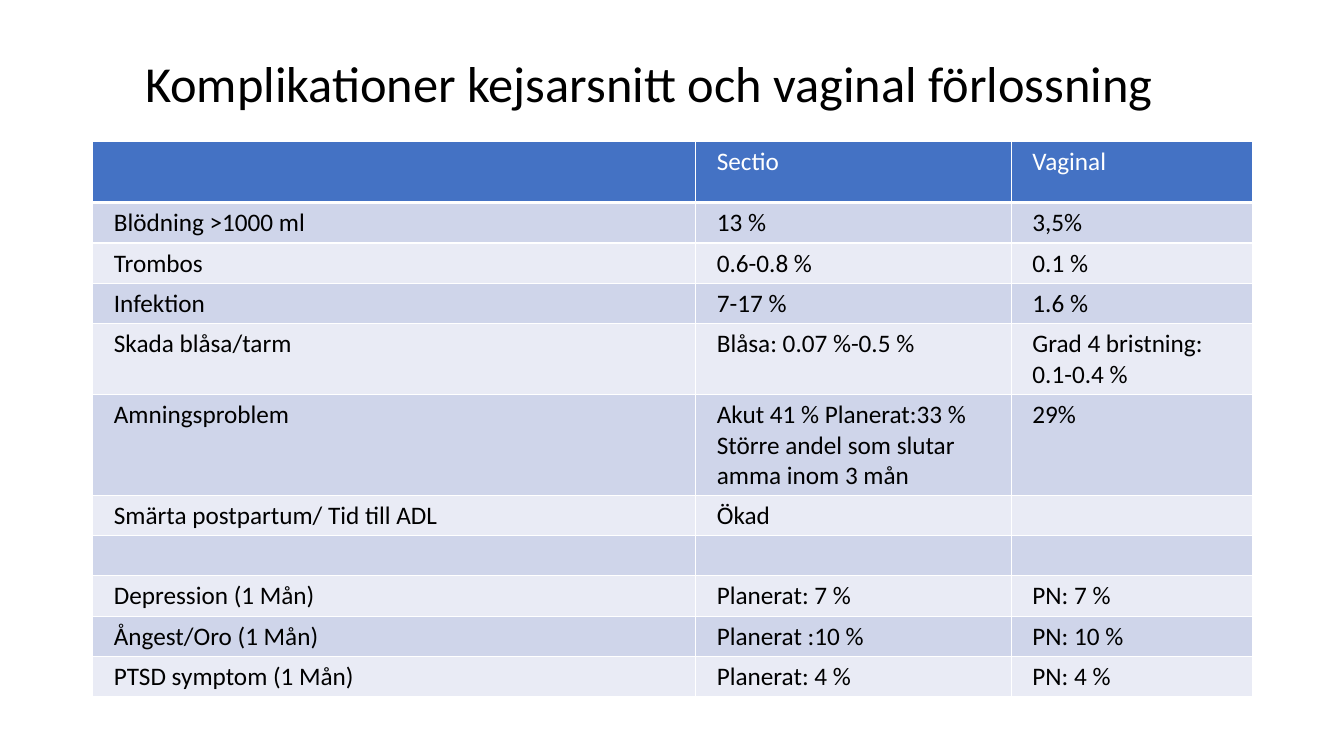
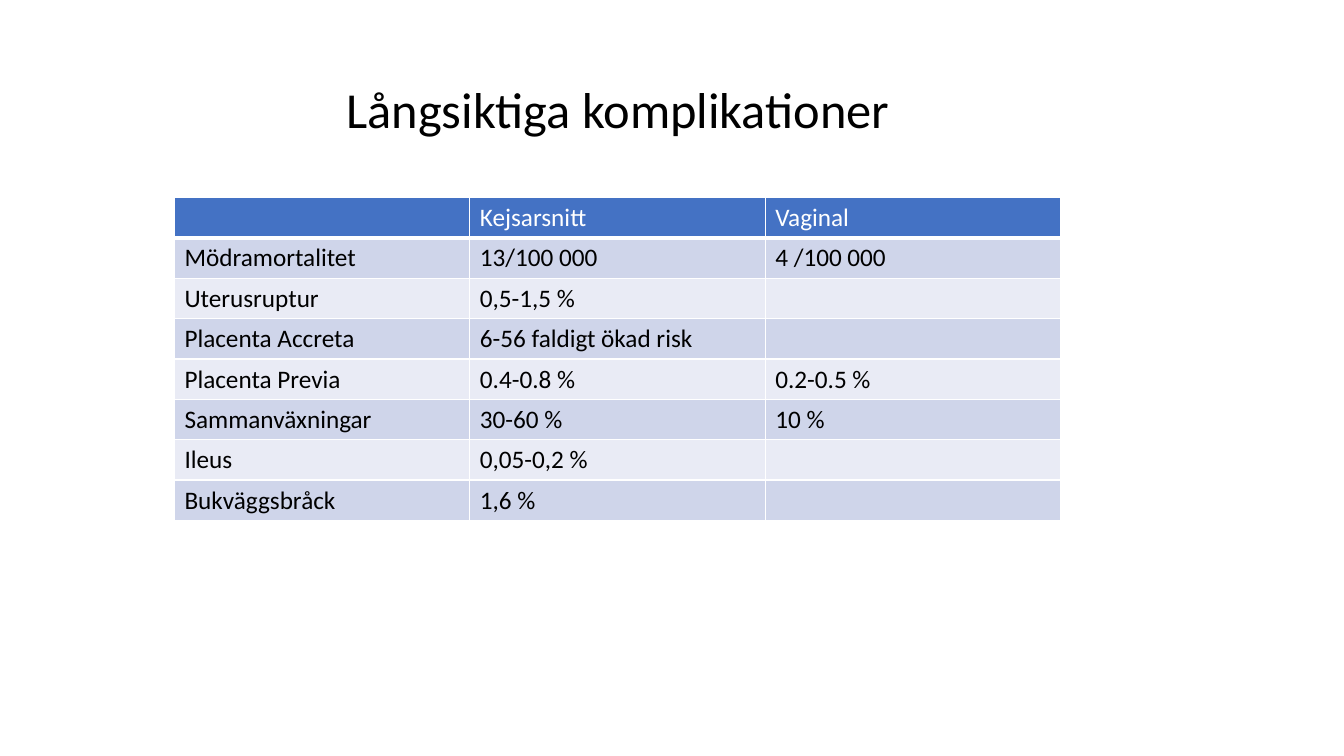
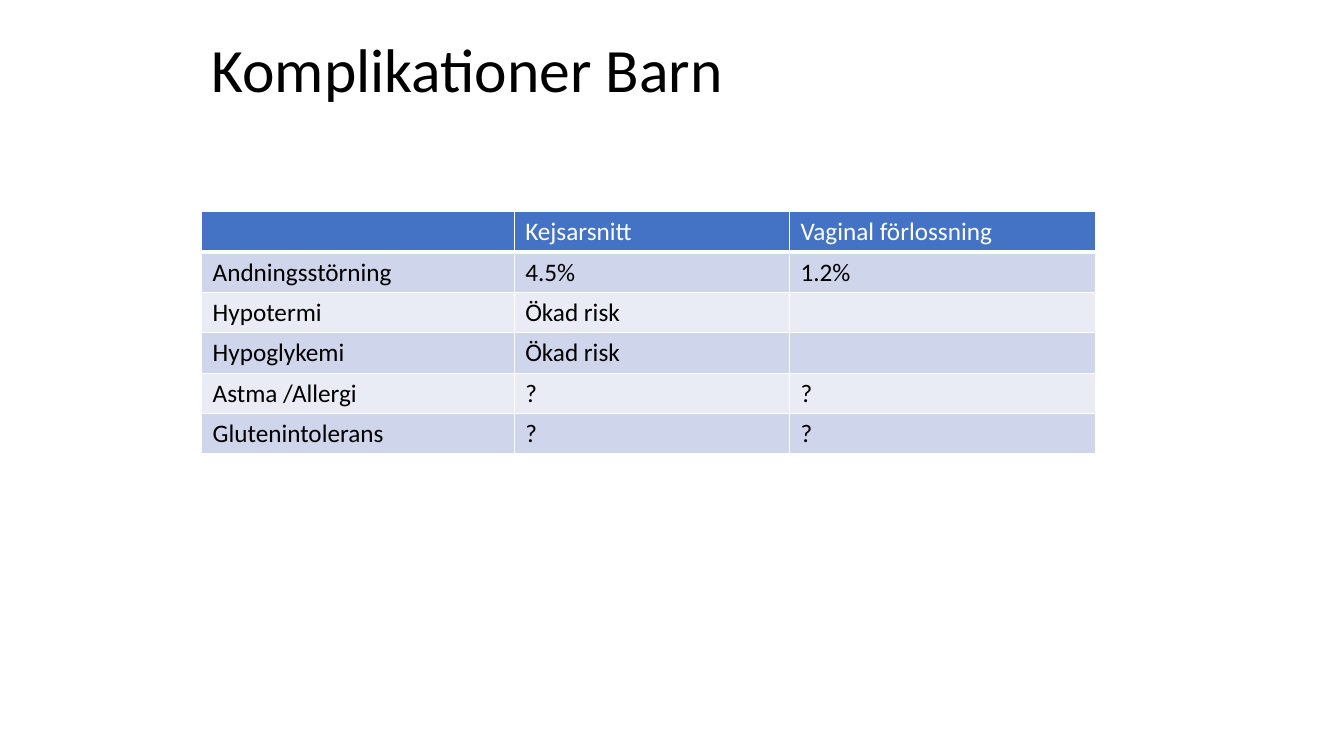
"""Builds three slides comparing complications of caesarean and vaginal birth."""
from lxml import etree
from pptx import Presentation
from pptx.dml.color import RGBColor
from pptx.enum.text import MSO_ANCHOR, PP_ALIGN
from pptx.oxml.ns import qn
from pptx.util import Inches, Pt

LEFT = PP_ALIGN.LEFT
CENTER = PP_ALIGN.CENTER
MIDDLE = MSO_ANCHOR.MIDDLE

BLACK = RGBColor(0x00, 0x00, 0x00)
WHITE = RGBColor(0xFF, 0xFF, 0xFF)
HEADER_BLUE = RGBColor(0x44, 0x72, 0xC4)
BANDS = (RGBColor(0xE9, 0xEB, 0xF5), RGBColor(0xCF, 0xD5, 0xEA))

FONT = "Calibri"
CELL_SIZE = 18
ROW_HEIGHT = 0.4
LINE_HEIGHT = 0.3

BIRTH_ROWS = [
    ("", "Sectio", "Vaginal"),
    ("Blödning >1000 ml", "13 %", "3,5%"),
    ("Trombos", "0.6-0.8 %", "0.1 %"),
    ("Infektion", "7-17 %", "1.6 %"),
    ("Skada blåsa/tarm", "Blåsa: 0.07 %-0.5 %", "Grad 4 bristning: 0.1-0.4 %"),
    ("Amningsproblem",
     "Akut 41 % Planerat:33 %\nStörre andel som slutar amma inom 3 mån", "29%"),
    ("Smärta postpartum/ Tid till ADL", "Ökad", ""),
    ("", "", ""),
    ("Depression (1 Mån)", "Planerat: 7 %", "PN: 7 %"),
    ("Ångest/Oro (1 Mån)", "Planerat :10 %", "PN: 10 %"),
    ("PTSD symptom (1 Mån)", "Planerat: 4 %", "PN: 4 %"),
]
LONG_TERM_ROWS = [
    ("", "Kejsarsnitt", "Vaginal"),
    ("Mödramortalitet", "13/100 000", "4 /100 000"),
    ("Uterusruptur", "0,5-1,5 %", ""),
    ("Placenta Accreta", "6-56 faldigt ökad risk", ""),
    ("Placenta Previa", "0.4-0.8 %", "0.2-0.5 %"),
    ("Sammanväxningar", "30-60 %", "10 %"),
    ("Ileus", "0,05-0,2 %", ""),
    ("Bukväggsbråck", "1,6 %", ""),
]
CHILD_ROWS = [
    ("", "Kejsarsnitt", "Vaginal förlossning"),
    ("Andningsstörning", "4.5%", "1.2%"),
    ("Hypotermi", "Ökad risk", ""),
    ("Hypoglykemi", "Ökad risk", ""),
    ("Astma /Allergi", "?", "?"),
    ("Glutenintolerans", "?", "?"),
]


class Deck:
    """Holds the shared style and the slide being filled."""

    def __init__(self):
        self.presentation = Presentation()
        self.presentation.slide_width = Inches(13.33)
        self.presentation.slide_height = Inches(7.5)
        self.slide = None

    def add_slide(self):
        """Starts a blank slide."""
        self.slide = self.presentation.slides.add_slide(self.presentation.slide_layouts[6])

    def add_text(self, paragraph, text, size, color):
        """Adds one styled run."""
        run = paragraph.add_run()
        run.text = text
        run.font.name = FONT
        run.font.size = Pt(size)
        run.font.bold = False
        run.font.color.rgb = color

    def title(self, text, left, top, width, height, size=36, align=LEFT, bottom_inset=0.05):
        """Adds the slide title."""
        box = self.slide.shapes.add_textbox(
            Inches(left), Inches(top), Inches(width), Inches(height))
        frame = box.text_frame
        frame.word_wrap = True
        frame.vertical_anchor = MIDDLE
        frame.margin_bottom = Inches(bottom_inset)
        paragraph = frame.paragraphs[0]
        paragraph.alignment = align
        paragraph.line_spacing = 0.9
        self.add_text(paragraph, text, size, BLACK)

    def borders(self, cell, bottom_width):
        """Draws white lines around a cell."""
        properties = cell._tc.get_or_add_tcPr()
        for side, width in (("L", 1), ("R", 1), ("T", 1), ("B", bottom_width)):
            line = etree.SubElement(properties, qn(f"a:ln{side}"), w=str(Pt(width)))
            fill = etree.SubElement(line, qn("a:solidFill"))
            etree.SubElement(fill, qn("a:srgbClr"), val=str(WHITE))

    def cell(self, cell, text, is_header, fill, inset):
        """Fills and styles one table cell."""
        self.borders(cell, 3 if is_header else 1)
        cell.fill.solid()
        cell.fill.fore_color.rgb = fill
        cell.margin_left = cell.margin_right = Inches(inset)
        frame = cell.text_frame
        for index, line in enumerate(text.splitlines()):
            paragraph = frame.add_paragraph() if index else frame.paragraphs[0]
            self.add_text(paragraph, line, CELL_SIZE, WHITE if is_header else BLACK)

    def table(self, rows, left, top, columns, inset=0.1, heights=None):
        """Adds a banded table; heights overrides the height of given rows."""
        heights = heights or {}
        row_heights = [heights.get(index, ROW_HEIGHT) for index in range(len(rows))]
        table = self.slide.shapes.add_table(
            len(rows), len(columns), Inches(left), Inches(top),
            Inches(sum(columns)), Inches(sum(row_heights))).table
        table.first_row = False
        table.horz_banding = False
        for column, width in zip(table.columns, columns):
            column.width = Inches(width)
        for index, (values, height) in enumerate(zip(rows, row_heights)):
            table.rows[index].height = Inches(height)
            fill = BANDS[index % 2] if index else HEADER_BLUE
            for column, text in enumerate(values):
                self.cell(table.cell(index, column), text, index == 0, fill, inset)


def main():
    """Builds and saves the deck."""
    deck = Deck()

    deck.add_slide()
    deck.title("Komplikationer kejsarsnitt och vaginal förlossning", 1.34, 0.13, 11.5, 1.45)
    deck.table(BIRTH_ROWS, 0.92, 1.4, (5.98, 3.13, 2.39), inset=0.21,
               heights={0: 0.61, 4: ROW_HEIGHT + LINE_HEIGHT, 5: ROW_HEIGHT + 2 * LINE_HEIGHT})

    deck.add_slide()
    deck.title("Långsiktiga komplikationer", 1.73, 0.59, 8.8, 1.05, align=CENTER)
    deck.table(LONG_TERM_ROWS, 1.73, 1.96, (2.93,) * 3)

    deck.add_slide()
    deck.title("Komplikationer Barn", 2, 0.19, 8.8, 1.41, size=44, bottom_inset=0.4)
    deck.table(CHILD_ROWS, 2, 2.1, (3.1, 2.73, 3.04), inset=0.11)

    deck.presentation.save("out.pptx")


if __name__ == "__main__":
    main()
